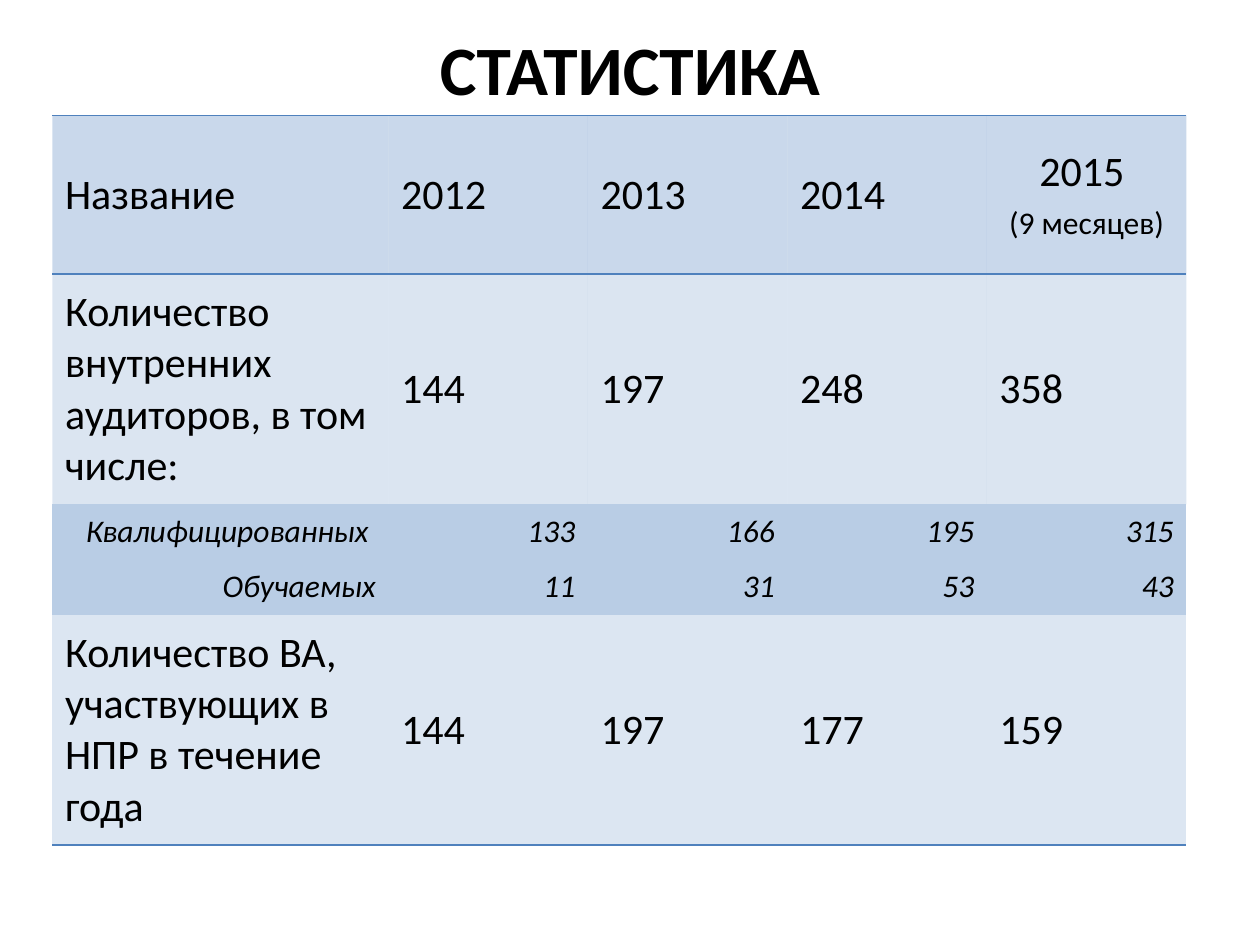
from lxml import etree
from pptx import Presentation
from pptx.dml.color import RGBColor
from pptx.enum.text import MSO_ANCHOR, PP_ALIGN
from pptx.oxml.ns import qn
from pptx.util import Pt

LEFT, CENTER, RIGHT = PP_ALIGN.LEFT, PP_ALIGN.CENTER, PP_ALIGN.RIGHT
MIDDLE = MSO_ANCHOR.MIDDLE
FONT = "Calibri"
BLACK, ACCENT, SUBROW, LAST = "000000", "4F81BD", "B9CDE5", "DCE6F2"
NO_STYLE = "{2D5ABB26-0587-4C30-8999-92F81FD0307C}"
COL_WIDTHS = [192, 114, 114, 114, 114]

# height, fill, opacity in percent, bordered edges, is a sub-row, cell texts
ROWS = [
    (90.6, ACCENT, 30, "TB", False,
     ["Название", "2012", "2013", "2014", "2015 \n(9 месяцев)"]),
    (131.7, ACCENT, 20, "", False,
     ["Количество внутренних аудиторов, в том числе:", "144", "197", "248", "358"]),
    (31.5, SUBROW, 100, "", True,
     ["Квалифицированных ", "133", "166", "195", "315"]),
    (31.5, SUBROW, 100, "", True, ["Oбучаемых", "11", "31", "53", "43"]),
    (131.7, LAST, 100, "B", False,
     ["Количество ВА, участвующих в НПР в течение года", "144", "197", "177", "159"]),
]


def rgb(color):
    return RGBColor.from_string(color)


def style_paragraph(p, size, align, bold=False, italic=False):
    p.alignment = align
    for r in p.runs:
        r.font.name, r.font.size = FONT, Pt(size)
        r.font.bold, r.font.italic = bold, italic
        r.font.color.rgb = rgb(BLACK)


def fill_cell(cell, color, opacity):
    cell.fill.solid()
    cell.fill.fore_color.rgb = rgb(color)
    if opacity < 100:
        clr = cell._tc.tcPr.find(qn("a:solidFill"))[0]
        etree.SubElement(clr, qn("a:alpha")).set("val", str(opacity * 1000))


def add_borders(cell, edges):
    """Borders come before the fill in the cell properties, top before bottom."""
    for i, edge in enumerate(edges):
        ln = etree.Element(qn(f"a:ln{edge}"), w=str(Pt(1)))
        solid = etree.SubElement(ln, qn("a:solidFill"))
        etree.SubElement(solid, qn("a:srgbClr"), val=ACCENT)
        cell._tc.tcPr.insert(i, ln)


def add_title(s, x, y, w, h):
    tf = s.shapes.add_textbox(Pt(x), Pt(y), Pt(w), Pt(h)).text_frame
    tf.word_wrap = True
    tf.vertical_anchor = MIDDLE
    tf.text = "СТАТИСТИКА"
    style_paragraph(tf.paragraphs[0], 39.6, CENTER, bold=True)


def add_statistics_table(s, x, y, w, h):
    table = s.shapes.add_table(len(ROWS), len(COL_WIDTHS),
                               Pt(x), Pt(y), Pt(w), Pt(h)).table
    table.horz_banding = False
    table._tbl.tblPr.find(qn("a:tableStyleId")).text = NO_STYLE
    for col, width in zip(table.columns, COL_WIDTHS):
        col.width = Pt(width)
    for row, (height, color, opacity, edges, is_sub, texts) in zip(table.rows, ROWS):
        row.height = Pt(height)
        for cell, text in zip(row.cells, texts):
            cell.vertical_anchor = MIDDLE
            fill_cell(cell, color, opacity)
            add_borders(cell, edges)
            cell.text_frame.text = text
            paragraphs = cell.text_frame.paragraphs
            align = RIGHT if is_sub else CENTER if len(paragraphs) > 1 else LEFT
            for p in paragraphs:
                style_paragraph(p, 18 if is_sub else 24, align, italic=is_sub)
            for p in paragraphs[1:]:
                style_paragraph(p, 18, align)
                p.space_before = Pt(4)


def main():
    prs = Presentation()
    prs.slide_width, prs.slide_height = Pt(720), Pt(540)
    s = prs.slides.add_slide(prs.slide_layouts[6])
    add_title(s, 36, 12, 648, 54)
    add_statistics_table(s, 30, 66, sum(COL_WIDTHS), sum(row[0] for row in ROWS))
    prs.save("out.pptx")


if __name__ == "__main__":
    main()
